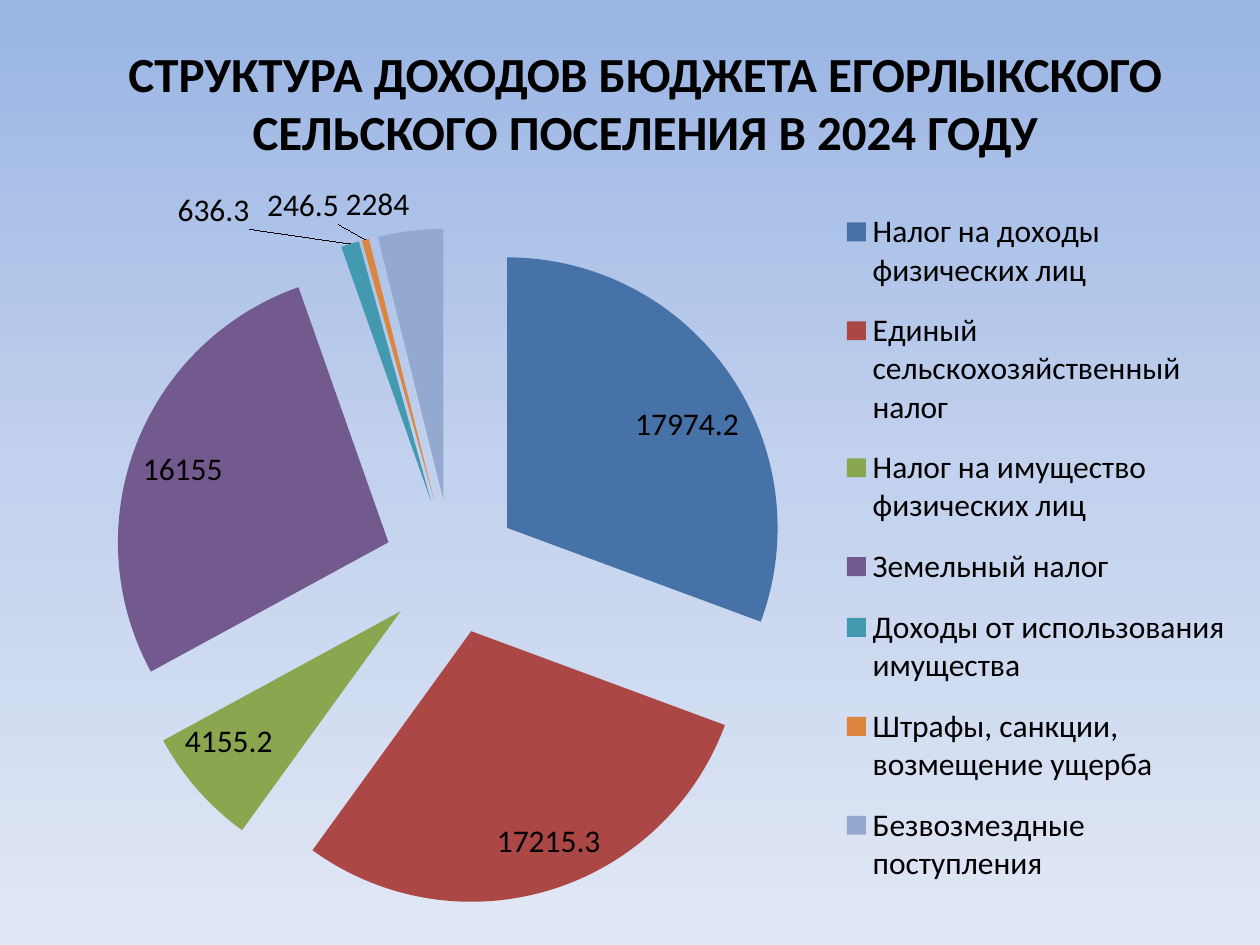
from copy import deepcopy
from dataclasses import dataclass

from lxml import etree
from pptx import Presentation
from pptx import util as u
from pptx.chart import data as cd
from pptx.dml import color
from pptx.enum import chart as ch
from pptx.enum import text as t
from pptx.oxml import ns


@dataclass(frozen=True)
class Theme:
    """Hold colours, fonts and type sizes."""
    font: str = "Calibri"
    ink: str = "000000"
    title_size: int = 28
    chart_size: int = 18
    sky: tuple = ((0, "9AB5E4"), (0.5, "C2D1ED"), (1, "E1E8F5"))
    slices: tuple = ("4672A8", "AB4744", "8AA64F", "725A8F",
                     "4299B0", "DC853E", "93A9CF")


INCOME = {
    "Налог на доходы физических лиц": 17974.2,
    "Единый сельскохозяйственный налог": 17215.3,
    "Налог на имущество физических лиц": 4155.2,
    "Земельный налог": 16155,
    "Доходы от использования имущества": 636.3,
    "Штрафы, санкции, возмещение ущерба": 246.5,
    "Безвозмездные поступления": 2284,
}
LABEL_SHIFTS = {4: (-0.08, -0.01), 5: (-0.02, -0.01)}


def style_font(font, size, ink, face, bold=False):
    """Apply size, colour, face and weight to a font."""
    font.size, font.name, font.bold = u.Pt(size), face, bold
    font.color.rgb = color.RGBColor.from_string(ink)


def write(frame, words, align=t.PP_ALIGN.CENTER, **style):
    """Write one formatted paragraph into a text frame."""
    paragraph = frame.paragraphs[0]
    paragraph.alignment = align
    run = paragraph.add_run()
    run.text = words
    style_font(run.font, **style)


def manual_layout(**values):
    """Return a chart layout element with the given settings."""
    layout = etree.Element(ns.qn("c:layout"))
    manual = etree.SubElement(layout, ns.qn("c:manualLayout"))
    for name, value in values.items():
        etree.SubElement(manual, ns.qn(f"c:{name}")).set("val", str(value))
    return layout


class Deck:
    """Draw styled elements on the current slide."""

    def __init__(self, theme, width=10, height=7.5):
        """Start a presentation with one blank slide."""
        self.theme = theme
        self.prs = Presentation()
        self.prs.slide_width = u.Inches(width)
        self.prs.slide_height = u.Inches(height)
        self.slide = self.prs.slides.add_slide(self.prs.slide_layouts[6])

    def box(self, left, top, width, height):
        """Turn shares of the slide into lengths."""
        across, down = self.prs.slide_width, self.prs.slide_height
        return (int(left * across), int(top * down),
                int(width * across), int(height * down))

    def background(self):
        """Fill the slide with a vertical gradient."""
        fill = self.slide.background.fill
        fill.gradient()
        fill.gradient_angle = 270
        stops = self.slide.element.find(".//" + ns.qn("a:gsLst"))
        stops.insert(1, deepcopy(stops[0]))
        for stop, (position, tone) in zip(fill.gradient_stops, self.theme.sky):
            stop.position = position
            stop.color.rgb = color.RGBColor.from_string(tone)

    def title(self, words, *place):
        """Add a bold centred heading."""
        frame = self.slide.shapes.add_textbox(*self.box(*place)).text_frame
        frame.word_wrap = True
        write(frame, words, size=self.theme.title_size, ink=self.theme.ink,
              face=self.theme.font, bold=True)

    def pie(self, amounts, shifts, *place):
        """Add an exploded pie with value labels and a legend."""
        figures = cd.CategoryChartData()
        figures.categories = list(amounts)
        figures.add_series("Series 1", list(amounts.values()))
        chart = self.slide.shapes.add_chart(
            ch.XL_CHART_TYPE.PIE_EXPLODED, *self.box(*place), figures).chart
        style_font(chart.font, self.theme.chart_size, self.theme.ink,
                   self.theme.font)
        chart.has_title = False
        self.legend(chart)
        area = chart.element.find(".//" + ns.qn("c:plotArea"))
        for old in area.findall(ns.qn("c:layout")):
            area.remove(old)
        area.insert(0, manual_layout(layoutTarget="inner", xMode="edge",
                                     yMode="edge", x=0.08, y=0.08,
                                     w=0.55, h=0.89))
        plot = chart.plots[0]
        plot.vary_by_categories = True
        self.slices(plot.series[0], shifts)

    def legend(self, chart):
        """Put the legend in the right third of the chart."""
        chart.has_legend = True
        chart.legend.position = ch.XL_LEGEND_POSITION.RIGHT
        chart.legend.include_in_layout = False
        element = chart.element.find(".//" + ns.qn("c:legend"))
        for old in element.findall(ns.qn("c:layout")):
            element.remove(old)
        element.find(ns.qn("c:legendPos")).addnext(
            manual_layout(xMode="edge", yMode="edge",
                          x=0.67, y=0.03, w=0.32, h=0.94))

    def slices(self, series, shifts):
        """Colour and explode the slices and place their labels."""
        for index, tone in enumerate(self.theme.slices):
            fill = series.points[index].format.fill
            fill.solid()
            fill.fore_color.rgb = color.RGBColor.from_string(tone)
        for explosion in series._element.iter(ns.qn("c:explosion")):
            explosion.set("val", "25")
        labels = series.data_labels
        labels.show_value = True
        labels.position = ch.XL_LABEL_POSITION.BEST_FIT
        leader = labels._element.find(ns.qn("c:showLeaderLines"))
        if leader is None:
            leader = etree.SubElement(labels._element,
                                      ns.qn("c:showLeaderLines"))
        leader.set("val", "1")
        for index, (dx, dy) in shifts.items():
            series.points[index].data_label.position = (
                ch.XL_LABEL_POSITION.BEST_FIT)
        for label in labels._element.findall(ns.qn("c:dLbl")):
            mark = label.find(ns.qn("c:idx"))
            dx, dy = shifts[int(mark.get("val"))]
            mark.addnext(manual_layout(x=dx, y=dy))


def main():
    """Build and save the budget slide."""
    deck = Deck(Theme())
    deck.background()
    deck.pie(INCOME, LABEL_SHIFTS, 0.012, 0.177, 0.976, 0.805)
    deck.title("СТРУКТУРА ДОХОДОВ БЮДЖЕТА ЕГОРЛЫКСКОГО СЕЛЬСКОГО "
               "ПОСЕЛЕНИЯ В 2024 ГОДУ", 0.083, 0.039, 0.858, 0.139)
    deck.prs.save("out.pptx")


if __name__ == "__main__":
    main()
